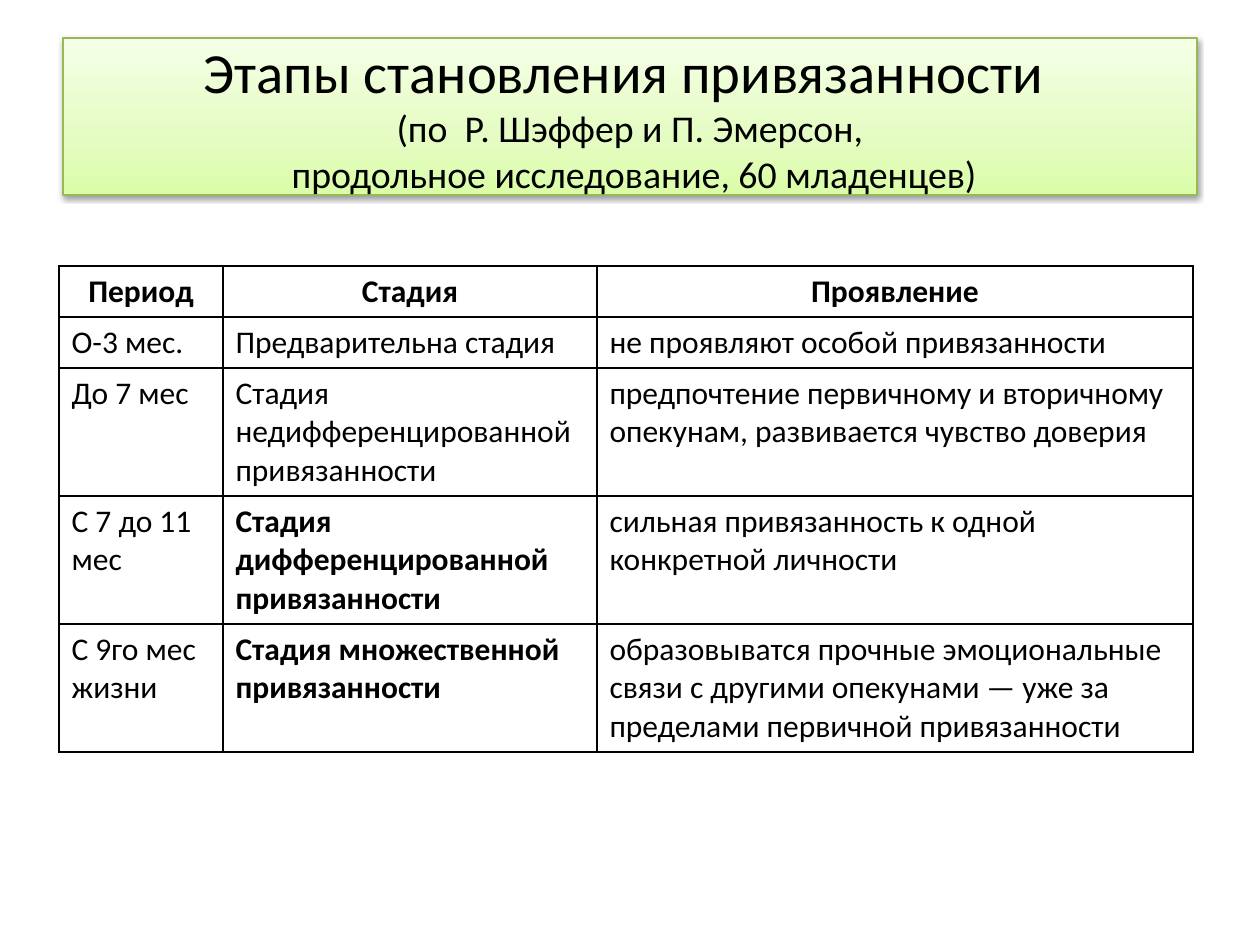
from copy import deepcopy

from lxml import etree
from pptx import Presentation
from pptx import util as u
from pptx.dml.color import RGBColor
from pptx.enum import text
from pptx.oxml import ns

PX = 914400 / 126
FONT = "Calibri"
BLACK = RGBColor(0x00, 0x00, 0x00)
GREEN_LINE = RGBColor(0x98, 0xB9, 0x55)
GREEN_STOPS = [
    (0, RGBColor(0xDA, 0xFD, 0xA7)),
    (0.35, RGBColor(0xE4, 0xFC, 0xC2)),
    (1, RGBColor(0xF5, 0xFF, 0xE7)),
]


def px(length):
    return u.Emu(round(length * PX))


def add_span(para, words, size, bold=False):
    span = para.add_run()
    span.text = words
    span.font.name = FONT
    span.font.size = u.Pt(size)
    span.font.bold = bold
    span.font.color.rgb = BLACK
    return span


deck = Presentation()
deck.slide_width, deck.slide_height = px(1260), px(945)
page = deck.slides.add_slide(deck.slide_layouts[5])

# Title with a green gradient and a soft shadow
title = page.shapes.title
title.left, title.top, title.width, title.height = px(63), px(38), px(1134), px(157)
title.fill.gradient()
title.fill.gradient_angle = 90
stops = title.fill.gradient_stops
stop_list = stops[0]._gs.getparent()
stop_list.insert(1, deepcopy(stop_list[0]))
for stop, (position, color) in zip(title.fill.gradient_stops, GREEN_STOPS):
    stop.position = position
    stop.color.rgb = color
title.line.color.rgb = GREEN_LINE
title.line.width = u.Pt(0.75)

title.shadow.inherit = False
effects = title._element.spPr.find(ns.qn("a:effectLst"))
shadow = etree.SubElement(effects, ns.qn("a:outerShdw"), blurRad=str(u.Pt(3.1)),
                          dist=str(u.Pt(1.6)), dir="5400000", rotWithShape="0")
shade = etree.SubElement(shadow, ns.qn("a:srgbClr"), val=str(BLACK))
etree.SubElement(shade, ns.qn("a:alpha"), val="38000")

frame = title.text_frame
frame.word_wrap = True
frame.auto_size = text.MSO_AUTO_SIZE.NONE
frame.vertical_anchor = text.MSO_ANCHOR.MIDDLE
para = frame.paragraphs[0]
para.alignment = text.PP_ALIGN.CENTER
TITLE_LINES = [
    ("Этапы становления привязанности ", 32.4),
    ("(по  Р. Шэффер и П. Эмерсон,", 21.6),
    (" продольное исследование, 60 младенцев)", 21.6),
]
for number, (words, size) in enumerate(TITLE_LINES, 1):
    span = add_span(para, words, size)
    if number < len(TITLE_LINES):
        para.add_line_break()
        # The break takes the size of its line
        para._p[-1].append(deepcopy(span._r.get_or_add_rPr()))

# Table of stages
ROWS = [
    ("Период", "Стадия", "Проявление"),
    ("О-3 мес.", "Предварительна стадия", "не проявляют особой привязанности"),
    ("До 7 мес ", "Стадия недифференцированной привязанности",
     "предпочтение первичному и вторичному опекунам, развивается чувство доверия"),
    ("С 7 до 11 мес", "Стадия дифференцированной привязанности",
     "сильная привязанность к одной конкретной личности"),
    ("С 9го мес жизни", "Стадия множественной привязанности",
     "образовыватся прочные эмоциональные связи с другими опекунами — уже "
     "за пределами первичной привязанности"),
]
COLUMN_WIDTHS = [164, 374, 596]
ROW_HEIGHTS = [51, 51, 128, 128, 128]
BOLD_STAGES = (3, 4)

table = page.shapes.add_table(len(ROWS), len(COLUMN_WIDTHS), px(59), px(266),
                              px(sum(COLUMN_WIDTHS)), px(sum(ROW_HEIGHTS))).table
table.first_row = table.horz_banding = False
for column, width in zip(table.columns, COLUMN_WIDTHS):
    column.width = px(width)
for row, height in zip(table.rows, ROW_HEIGHTS):
    row.height = px(height)

for r, entries in enumerate(ROWS):
    for c, words in enumerate(entries):
        cell = table.cell(r, c)
        cell.fill.background()
        para = cell.text_frame.paragraphs[0]
        if r == 0:
            para.alignment = text.PP_ALIGN.CENTER
        add_span(para, words, 18, bold=r == 0 or (c == 1 and r in BOLD_STAGES))
        properties = cell._tc.get_or_add_tcPr()
        for place, side in enumerate(("lnL", "lnR", "lnT", "lnB")):
            border = etree.Element(ns.qn(f"a:{side}"), w=str(u.Pt(1)))
            ink = etree.SubElement(border, ns.qn("a:solidFill"))
            etree.SubElement(ink, ns.qn("a:srgbClr"), val=str(BLACK))
            properties.insert(place, border)

deck.save("out.pptx")
